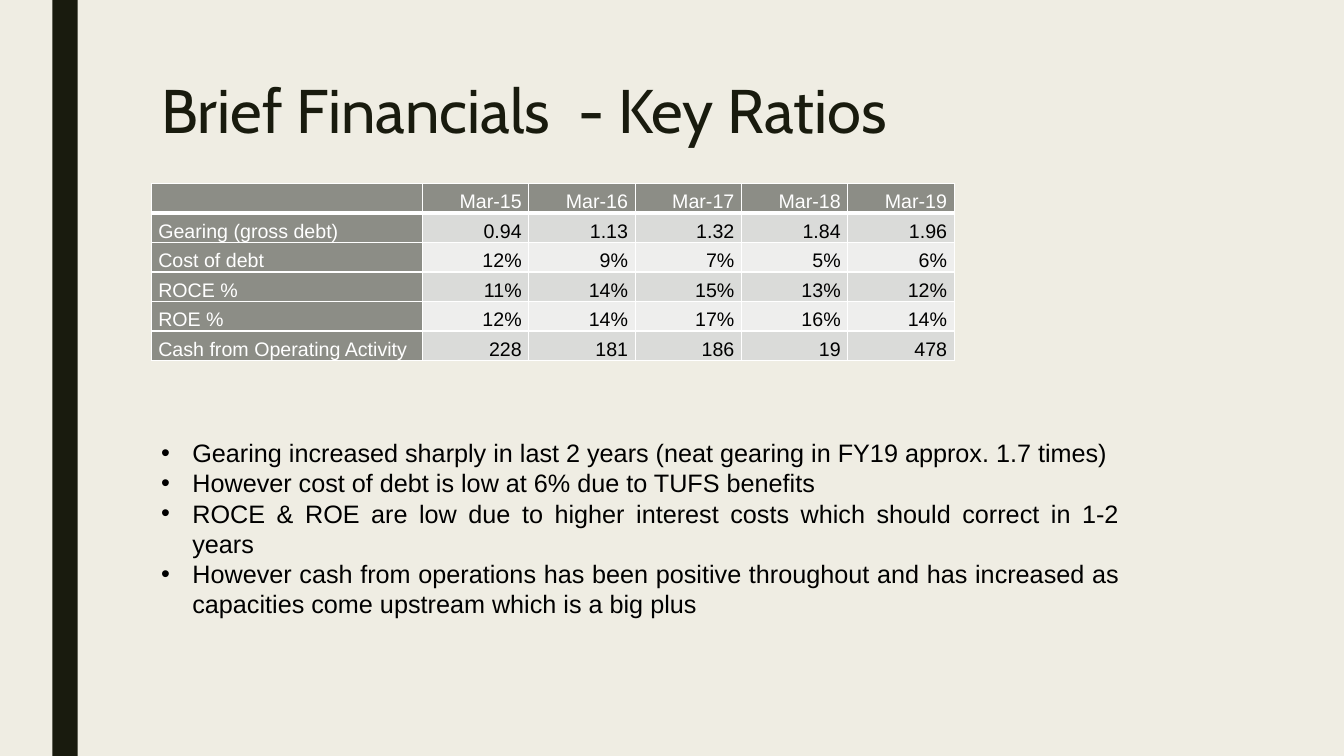
from lxml import etree
from pptx import Presentation
from pptx.dml.color import RGBColor
from pptx.enum.shapes import MSO_SHAPE
from pptx.enum.text import MSO_ANCHOR, PP_ALIGN
from pptx.oxml.ns import qn
from pptx.util import Inches, Pt

TITLE = "Brief Financials  - Key Ratios"
RATIOS = [
    ("", "Mar-15", "Mar-16", "Mar-17", "Mar-18", "Mar-19"),
    ("Gearing (gross debt)", "0.94", "1.13", "1.32", "1.84", "1.96"),
    ("Cost of debt", "12%", "9%", "7%", "5%", "6%"),
    ("ROCE %", "11%", "14%", "15%", "13%", "12%"),
    ("ROE %", "12%", "14%", "17%", "16%", "14%"),
    ("Cash from Operating Activity", "228", "181", "186", "19", "478"),
]
COMMENTS = [
    "Gearing increased sharply in last 2 years (neat gearing in FY19 approx. 1.7 times)",
    "However cost of debt is low at 6% due to TUFS benefits",
    "ROCE & ROE are low due to higher interest costs which should correct in 1-2 years",
    "However cash from operations has been positive throughout and has increased as "
    "capacities come upstream which is a big plus",
]

CREAM = RGBColor(0xEF, 0xED, 0xE3)
DARK = RGBColor(0x19, 0x1B, 0x0E)
GREY = RGBColor(0x8C, 0x8D, 0x86)
BAND_DARK = RGBColor(0xDA, 0xDB, 0xD9)
BAND_LIGHT = RGBColor(0xEE, 0xEE, 0xED)
WHITE = RGBColor(0xFF, 0xFF, 0xFF)
BLACK = RGBColor(0, 0, 0)

LEFT = Inches(1.5)
LABEL_W, YEAR_W, ROW_H = Inches(2.69), Inches(1.055), Inches(0.293)
INDENT = Inches(0.31)


def style_font(font, name, size, color):
    font.name, font.size = name, Pt(size)
    font.color.rgb = color


def add_borders(cell, bottom_width):
    tc_pr = cell._tc.get_or_add_tcPr()
    widths = {"a:lnL": 1, "a:lnR": 1, "a:lnT": 1, "a:lnB": bottom_width}
    for i, (tag, width) in enumerate(widths.items()):
        ln = etree.Element(qn(tag), w=str(Pt(width)))
        fill = etree.SubElement(ln, qn("a:solidFill"))
        etree.SubElement(fill, qn("a:srgbClr"), val=str(WHITE))
        tc_pr.insert(i, ln)


def add_bullet(p):
    p_pr = p._p.get_or_add_pPr()
    p_pr.set("marL", str(INDENT))
    p_pr.set("indent", str(-INDENT))
    etree.SubElement(p_pr, qn("a:buFont"), typeface="Arial")
    etree.SubElement(p_pr, qn("a:buChar"), char="•")


prs = Presentation()
prs.slide_width, prs.slide_height = Inches(13.33), Inches(7.5)
slide = prs.slides.add_slide(prs.slide_layouts[5])
slide.background.fill.solid()
slide.background.fill.fore_color.rgb = CREAM

bar = slide.shapes.add_shape(MSO_SHAPE.RECTANGLE, Inches(0.52), 0, Inches(0.25), prs.slide_height)
bar.shadow.inherit = False
bar.fill.solid()
bar.fill.fore_color.rgb = DARK
bar.line.fill.background()

title = slide.shapes.title
title.left, title.top, title.width, title.height = LEFT, Inches(0.75), Inches(10.5), Inches(1.62)
title.text_frame.text = TITLE
title.text_frame.vertical_anchor = MSO_ANCHOR.TOP
p = title.text_frame.paragraphs[0]
p.alignment, p.line_spacing = PP_ALIGN.LEFT, 0.89
style_font(p.runs[0].font, "Cabin", 44, DARK)

years = len(RATIOS[0]) - 1
table = slide.shapes.add_table(len(RATIOS), years + 1, LEFT, Inches(1.82),
                               LABEL_W + years * YEAR_W, len(RATIOS) * ROW_H).table
for c, column in enumerate(table.columns):
    column.width = YEAR_W if c else LABEL_W
for r, values in enumerate(RATIOS):
    table.rows[r].height = ROW_H
    for c, value in enumerate(values):
        cell = table.cell(r, c)
        is_head = r == 0 or c == 0
        cell.fill.solid()
        cell.fill.fore_color.rgb = GREY if is_head else BAND_DARK if r % 2 else BAND_LIGHT
        add_borders(cell, 3 if r == 0 else 1)
        cell.vertical_anchor = MSO_ANCHOR.BOTTOM
        cell.margin_left = cell.margin_right = Inches(0.07)
        cell.margin_top = cell.margin_bottom = 0
        p = cell.text_frame.paragraphs[0]
        p.text = value
        p.alignment = PP_ALIGN.RIGHT if c else PP_ALIGN.LEFT
        for font in [p.font] + [run.font for run in p.runs]:
            style_font(font, "Arial", 14, WHITE if is_head else BLACK)
            font.bold = False

box = slide.shapes.add_textbox(LEFT, Inches(4.29), Inches(9.7), Inches(2.52))
tf = box.text_frame
tf.word_wrap = True
tf.text = "\n".join(COMMENTS)
for p in tf.paragraphs:
    p.alignment = PP_ALIGN.JUSTIFY
    add_bullet(p)
    style_font(p.runs[0].font, "Arial", 18, BLACK)

prs.save("out.pptx")
